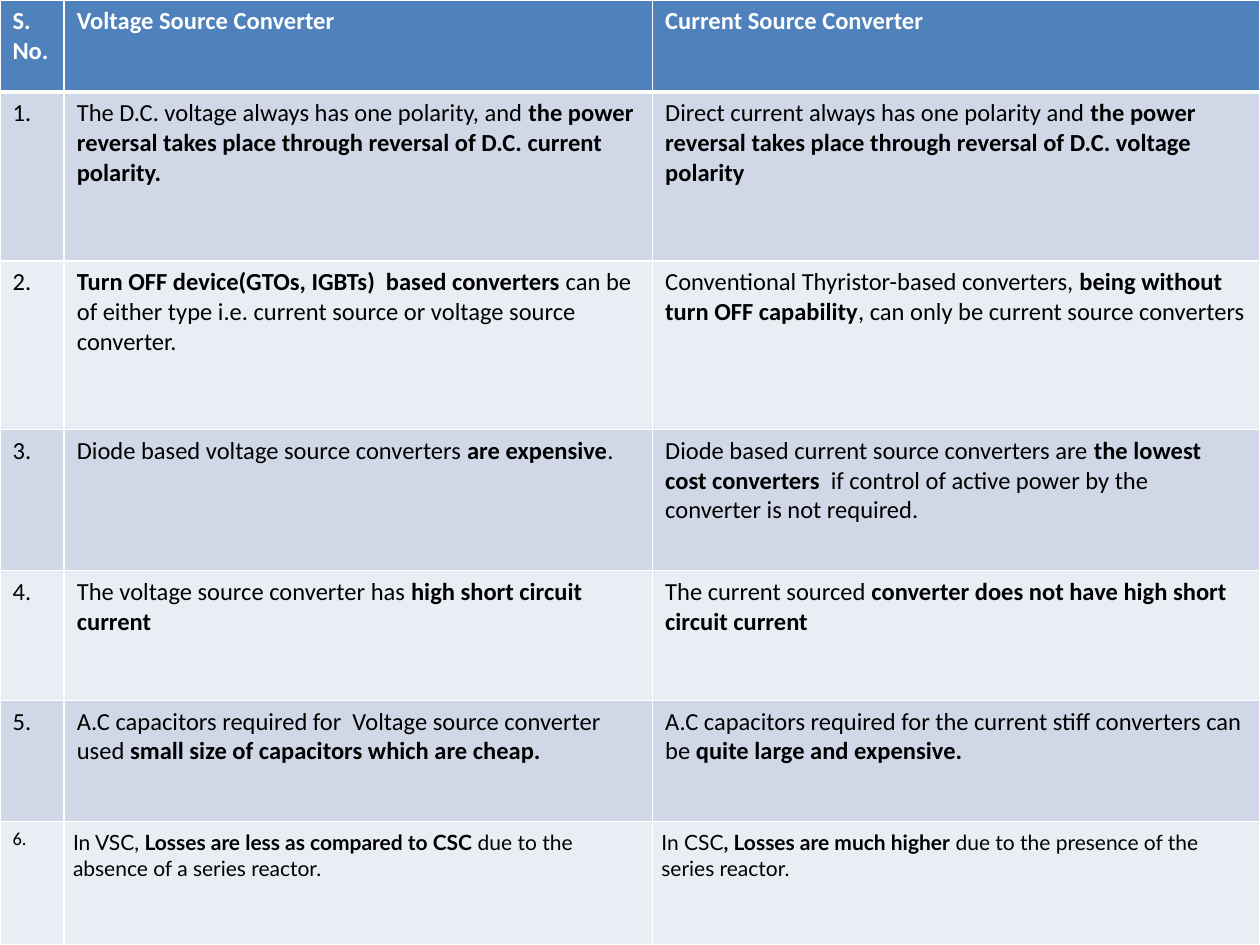
from dataclasses import dataclass

from lxml import etree
from pptx import Presentation
from pptx.dml.color import RGBColor
from pptx.oxml.ns import qn
from pptx.util import Inches, Pt

BLANK = 6
COLS = (0.51, 4.67, 4.82)
ROWS = (0.73, 1.34, 1.34, 1.12, 1.03, 0.96, 0.98)
HEAD = ("S. No.", "Voltage Source Converter", "Current Source Converter")
PAIRS = (
    ("The D.C. voltage always has one polarity, and *the power reversal takes "
     "place through reversal of D.C. current polarity.",
     "Direct current always has one polarity and *the power reversal takes "
     "place through reversal of D.C. voltage polarity"),
    ("*Turn OFF device(GTOs, IGBTs)  based converters *can be of either type "
     "i.e. current source or voltage source converter.",
     "Conventional Thyristor-based converters, *being without turn OFF "
     "capability*, can only be current source converters"),
    ("Diode based voltage source converters *are expensive*.",
     "Diode based current source converters are *the lowest cost converters * "
     "if control of active power by the converter is not required."),
    ("The voltage source converter has *high short circuit current",
     "The current sourced *converter does not have high short circuit current"),
    ("A.C capacitors required for  Voltage source converter used *small size "
     "of capacitors which are cheap.",
     "A.C capacitors required for the current stiff converters can be *quite "
     "large and expensive."),
    ("In VSC, *Losses are less as compared to CSC *due to the absence of a "
     "series reactor.",
     "In CSC*, Losses are much higher* due to the presence of the series "
     "reactor."),
)


@dataclass(frozen=True)
class Theme:
    """Colours, fonts and sizes of the slide."""
    head: str = "4F81BD"
    bands: tuple = ("E9EDF4", "D0D8E8")
    line: str = "FFFFFF"
    light: str = "FFFFFF"
    ink: str = "000000"
    font: str = "Calibri"
    last_font: str = "Lato"
    size: float = 14
    last_size: float = 12
    last_num: float = 10.5
    thin: float = 1
    thick: float = 3


THEME = Theme()


def edge(cell, side, width):
    """Draw one border of a cell."""
    line = etree.SubElement(cell._tc.get_or_add_tcPr(), qn("a:ln" + side),
                            w=str(Pt(width)))
    fill = etree.SubElement(line, qn("a:solidFill"))
    etree.SubElement(fill, qn("a:srgbClr"), val=THEME.line)


def frame(cell, row):
    """Border a cell, with a thick rule under the header."""
    thick = {"T": row == 1, "B": row == 0}
    for side in "LRTB":
        edge(cell, side, THEME.thick if thick.get(side) else THEME.thin)


def paint(cell, color):
    """Fill a cell with a plain colour."""
    cell.fill.solid()
    cell.fill.fore_color.rgb = RGBColor.from_string(color)


def write(cell, text, color, font, size, bold=False):
    """Write text in which each star switches bold on or off."""
    para = cell.text_frame.paragraphs[0]
    para.font.name, para.font.size = font, Pt(size)
    para.font.color.rgb = RGBColor.from_string(color)
    for i, part in enumerate(text.split("*")):
        if part:
            run = para.add_run()
            run.text = part
            run.font.name, run.font.size = font, Pt(size)
            run.font.color.rgb = RGBColor.from_string(color)
            run.font.bold = bold or i % 2 == 1


def pad(cell, gap):
    """Set all four margins of a cell."""
    cell.margin_left = cell.margin_right = gap
    cell.margin_top = cell.margin_bottom = gap


def style(row, col):
    """Return the colour, font, size and weight for a cell."""
    if row == 0:
        return THEME.light, THEME.font, THEME.size, True
    if row < len(PAIRS):
        return THEME.ink, THEME.font, THEME.size, False
    if col == 0:
        return THEME.ink, THEME.font, THEME.last_num, False
    return THEME.ink, THEME.last_font, THEME.last_size, False


def add_grid(slide, left, top, width, height):
    """Place the comparison table in the given box."""
    data = [HEAD] + [(f"{n}.", *pair) for n, pair in enumerate(PAIRS, 1)]
    grid = slide.shapes.add_table(len(ROWS), len(COLS), left, top,
                                  width, height).table
    for col, share in zip(grid.columns, COLS):
        col.width = int(width * share / sum(COLS))
    for row, share in zip(grid.rows, ROWS):
        row.height = int(height * share / sum(ROWS))
    for r, texts in enumerate(data):
        for c, text in enumerate(texts):
            cell = grid.cell(r, c)
            frame(cell, r)
            paint(cell, THEME.bands[r % 2] if r else THEME.head)
            write(cell, text, *style(r, c))
            if r == len(PAIRS) and c:
                pad(cell, Inches(0.07))


def main():
    """Build and save the slide."""
    deck = Presentation()
    deck.slide_width, deck.slide_height = Inches(10), Inches(7.5)
    slide = deck.slides.add_slide(deck.slide_layouts[BLANK])
    add_grid(slide, 0, 0, deck.slide_width, deck.slide_height)
    deck.save("out.pptx")


if __name__ == "__main__":
    main()
